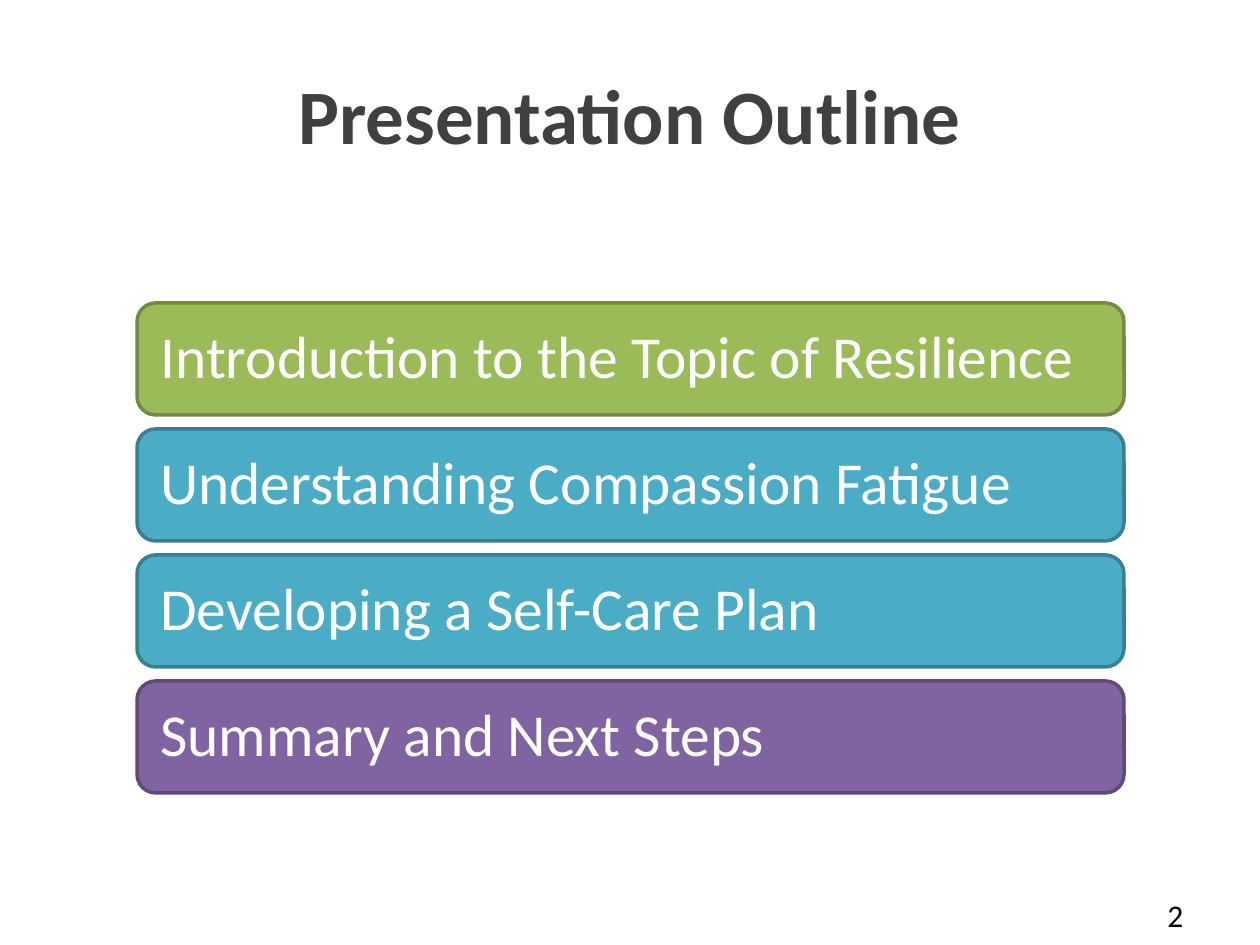
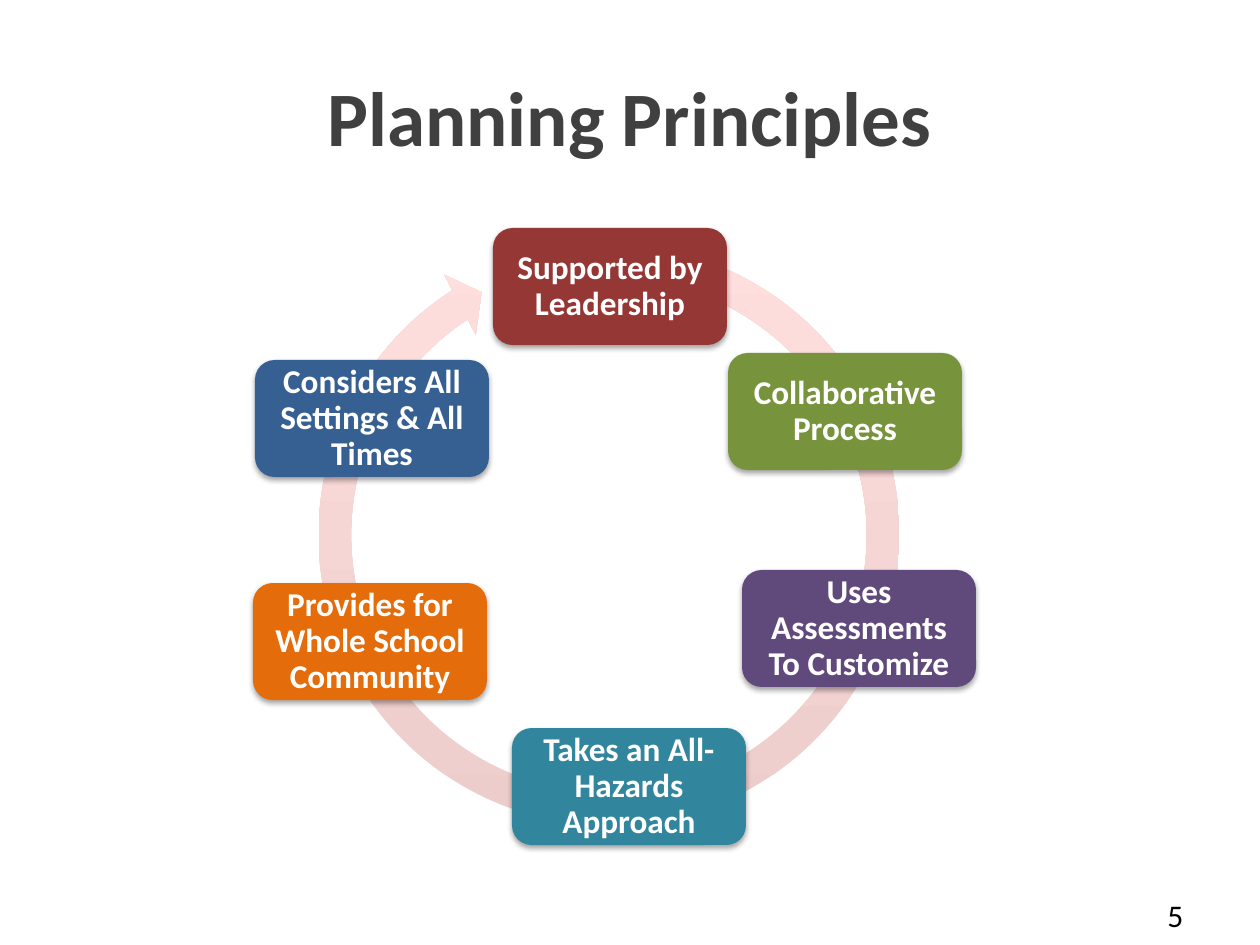
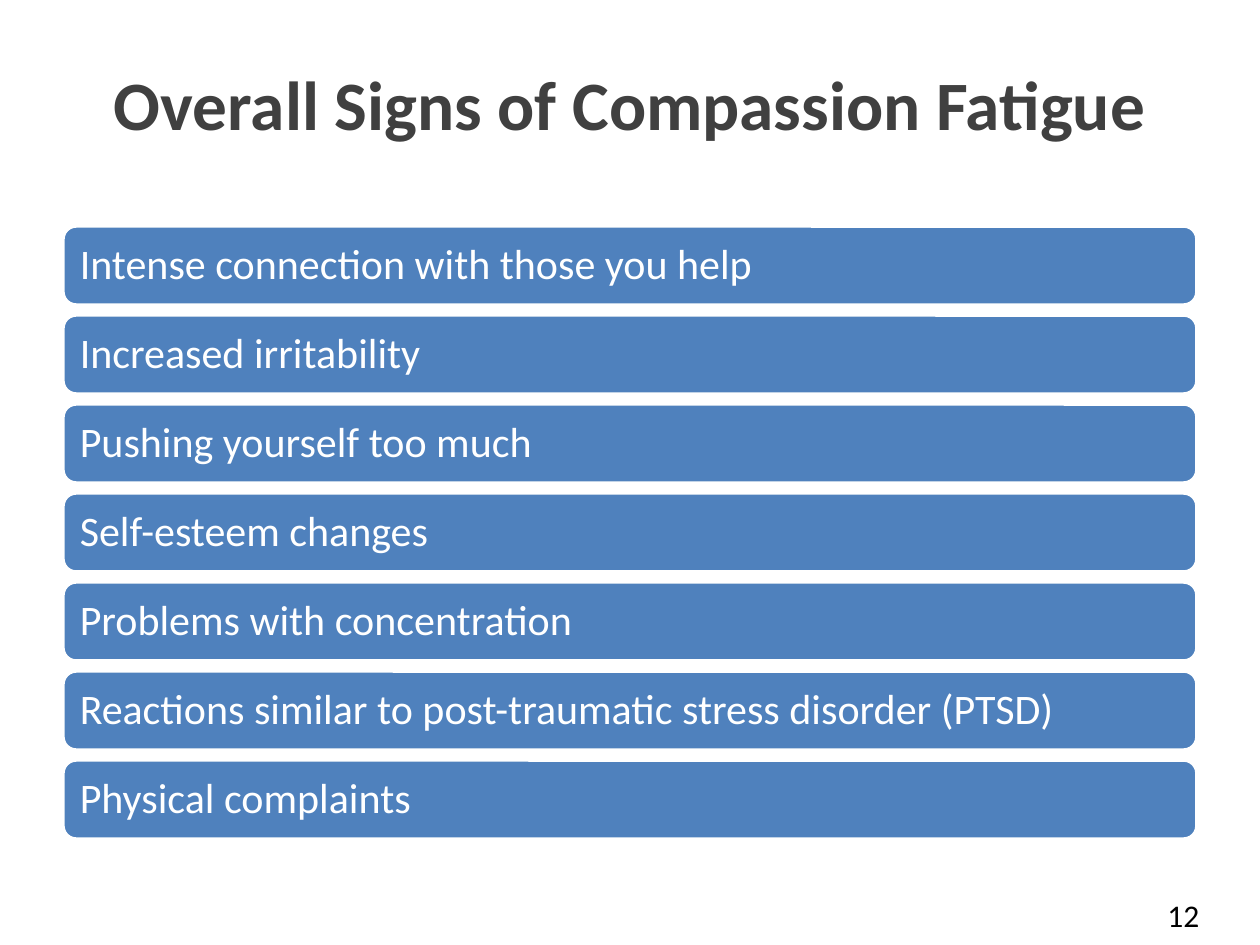
from lxml import etree
from pptx import Presentation
from pptx.dml.color import RGBColor
from pptx.enum.shapes import MSO_SHAPE
from pptx.enum.text import MSO_ANCHOR, PP_ALIGN
from pptx.oxml.ns import qn
from pptx.util import Pt

ROUNDED = MSO_SHAPE.ROUNDED_RECTANGLE
CIRCULAR_ARROW = MSO_SHAPE.CIRCULAR_ARROW
TOP, MIDDLE = MSO_ANCHOR.TOP, MSO_ANCHOR.MIDDLE
LEFT, CENTER = PP_ALIGN.LEFT, PP_ALIGN.CENTER

PX_PER_INCH = 126
FONT = "Calibri"
WHITE, BLACK, TITLE_GRAY = "FFFFFF", "000000", "404040"
BLUE = "4F81BD"

OUTLINE = [
    ("Introduction to the Topic of Resilience", "9BBB59", "738A42"),
    ("Understanding Compassion Fatigue", "4BACC6", "377F92"),
    ("Developing a Self-Care Plan", "4BACC6", "377F92"),
    ("Summary and Next Steps", "8064A2", "5F4A78"),
]
PRINCIPLES = [
    ("Supported by Leadership", 493, 228, "953735"),
    ("Collaborative Process", 728, 353, "77933C"),
    ("Uses Assessments To Customize", 742, 570, "604A7B"),
    ("Takes an All-Hazards Approach", 512, 728, "31859C"),
    ("Provides for Whole School Community", 253, 583, "E46C0A"),
    ("Considers All Settings & All Times", 255, 360, "376092"),
]
SIGNS = [
    "Intense connection with those you help",
    "Increased irritability",
    "Pushing yourself too much",
    "Self-esteem changes",
    "Problems with concentration",
    "Reactions similar to post-traumatic stress disorder (PTSD)",
    "Physical complaints",
]


def px(length):
    return round(length * 914400 / PX_PER_INCH)


def color(hex_code):
    return RGBColor.from_string(hex_code)


class Deck:
    def __init__(self):
        self.prs = Presentation()
        self.prs.slide_width, self.prs.slide_height = px(1260), px(945)
        self.slide = None

    def new_slide(self, title, number, top, height=158, size=44):
        self.slide = self.prs.slides.add_slide(self.prs.slide_layouts[6])
        self.text_box(title, (63, top, 1134, height), size, TITLE_GRAY, CENTER, MIDDLE, True)
        self.text_box(str(number), (1155, 890, 69, 55), 18, BLACK)

    def set_text(self, frame, text, size, hex_code, align, anchor, bold):
        frame.word_wrap = True
        frame.vertical_anchor = anchor
        paragraph = frame.paragraphs[0]
        paragraph.text = text
        paragraph.alignment = align
        font = paragraph.font
        font.name, font.size, font.bold = FONT, Pt(size), bold
        font.color.rgb = color(hex_code)
        return paragraph

    def text_box(self, text, box, size, hex_code, align=LEFT, anchor=TOP, bold=False):
        frame = self.slide.shapes.add_textbox(*map(px, box)).text_frame
        self.set_text(frame, text, size, hex_code, align, anchor, bold)

    def shape(self, kind, box, line=None):
        shape = self.slide.shapes.add_shape(kind, *map(px, box))
        shape.shadow.inherit = False
        if line:
            shape.line.color.rgb = color(line)
            shape.line.width = Pt(2)
        else:
            shape.line.fill.background()
        return shape

    def card(self, text, box, fill, size, inset, line=None, align=LEFT, bold=False):
        card = self.shape(ROUNDED, box, line)
        card.fill.solid()
        card.fill.fore_color.rgb = color(fill)
        frame = card.text_frame
        frame.margin_left = frame.margin_right = px(inset)
        frame.margin_top = frame.margin_bottom = px(inset)
        paragraph = self.set_text(frame, text, size, WHITE, align, MIDDLE, bold)
        paragraph.line_spacing = 0.9
        return card

    def drop_shadow(self, shape):
        effects = shape._element.spPr.find(qn("a:effectLst"))
        shadow = etree.SubElement(effects, qn("a:outerShdw"), blurRad="40000",
                                  dist="23000", dir="5400000", rotWithShape="0")
        tint = etree.SubElement(shadow, qn("a:srgbClr"), val=BLACK)
        etree.SubElement(tint, qn("a:alpha"), val="35000")

    def cycle_arrow(self, box, adjustments, bottom, top):
        arrow = self.shape(CIRCULAR_ARROW, box)
        for index, value in enumerate(adjustments):
            arrow.adjustments[index] = value
        arrow.fill.gradient()
        arrow.fill.gradient_angle = 90
        for stop, position, hex_code in zip(arrow.fill.gradient_stops, (0, 1), (bottom, top)):
            stop.position = position
            stop.color.rgb = color(hex_code)


def main():
    deck = Deck()

    deck.new_slide("Presentation Outline", 2, top=35)
    for row, (topic, fill, border) in enumerate(OUTLINE):
        deck.card(topic, (137, 303 + 126 * row, 987, 112), fill, 34, 18, border)

    deck.new_slide("Planning Principles", 5, top=33, height=166)
    deck.cycle_arrow((301, 227, 616, 616), (0.053, 3.126, 142.258, 171.284, 0.055),
                     "ECCDCC", "FFDFDE")
    for principle, left, top, fill in PRINCIPLES:
        card = deck.card(principle, (left, top, 234, 117), fill, 19, 10, align=CENTER, bold=True)
        deck.drop_shadow(card)

    deck.new_slide("Overall Signs of Compassion Fatigue", 12, top=24, size=39.6)
    for row, sign in enumerate(SIGNS):
        deck.card(sign, (63, 226 + 89 * row, 1134, 79), BLUE, 24, 13, WHITE)

    deck.prs.save("out.pptx")


if __name__ == "__main__":
    main()
